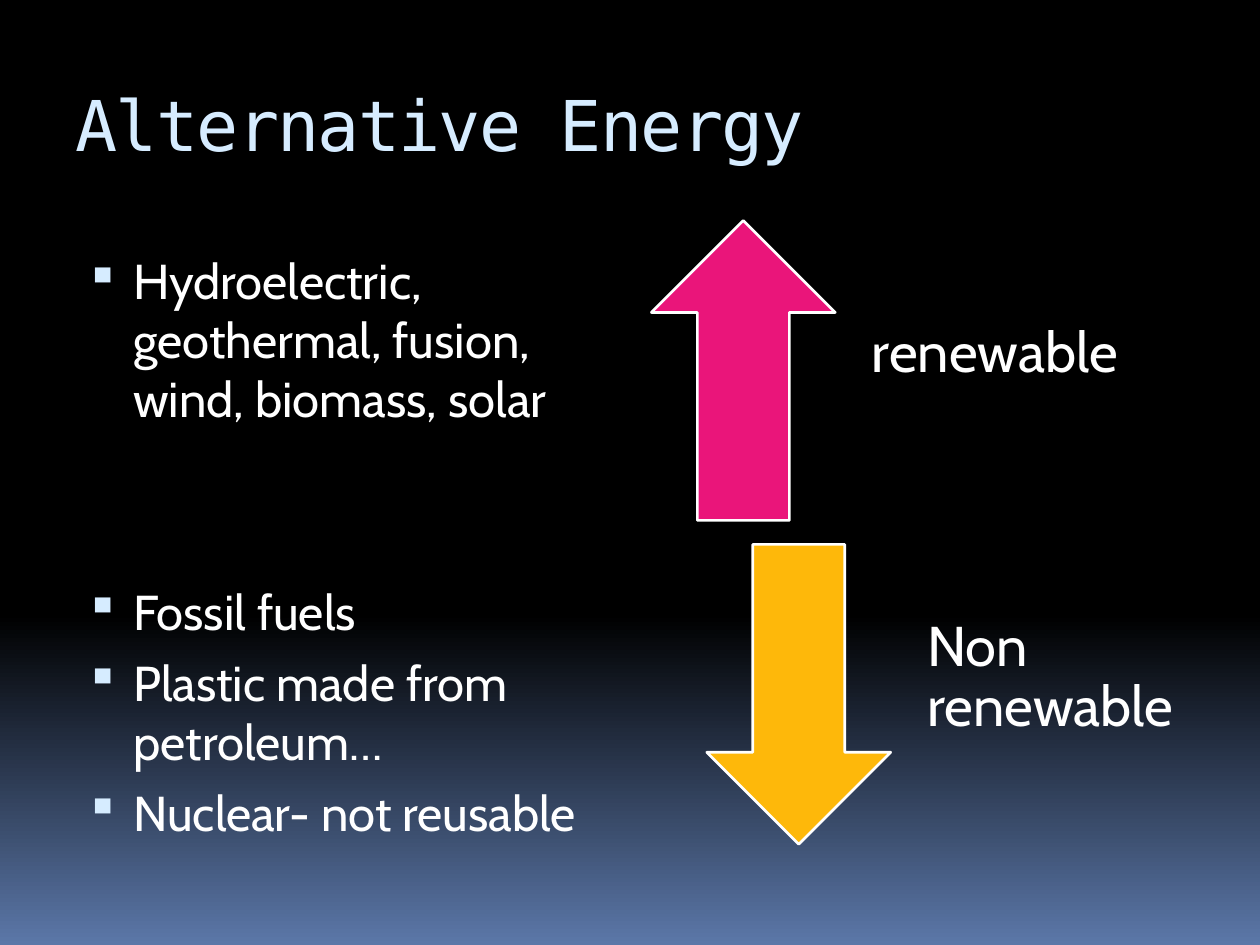
from dataclasses import dataclass
from lxml import etree
from pptx import Presentation
from pptx.dml.color import RGBColor
from pptx.enum.shapes import MSO_SHAPE
from pptx.enum.text import MSO_ANCHOR, PP_ALIGN
from pptx.oxml.ns import qn
from pptx.util import Inches, Pt

UP, DOWN = MSO_SHAPE.UP_ARROW, MSO_SHAPE.DOWN_ARROW
TOP, MIDDLE = MSO_ANCHOR.TOP, MSO_ANCHOR.MIDDLE
LEFT = PP_ALIGN.LEFT


@dataclass(frozen=True)
class Theme:
    """Colours, fonts and type sizes of the slide."""
    black: str = "000000"
    blue: str = "5B77A8"
    pale: str = "D6ECFF"
    white: str = "FFFFFF"
    pink: str = "EA157A"
    gold: str = "FEB80A"
    head: str = "DejaVu Sans Mono"
    body: str = "Cabin"
    title: int = 40
    list: int = 28
    label: int = 32


THEME = Theme()
ITEMS = [
    ("Hydroelectric, geothermal, fusion, wind, biomass, solar", 0),
    ("Fossil fuels", 88),
    ("Plastic made from petroleum…", 7),
    ("Nuclear- not reusable", 7),
]
ARROWS = [
    (UP, THEME.pink, "renewable", (5.17, 1.75, 3.97, 2.38)),
    (DOWN, THEME.gold, "Non renewable", (5.61, 4.32, 3.97, 2.38)),
]


def rgb(code):
    """Turn a hex code into a colour."""
    return RGBColor.from_string(code)


def put(obj, **values):
    """Set each given attribute on an object."""
    for name, value in values.items():
        setattr(obj, name, value)


def place(shape, box):
    """Move and size a shape to a box in inches."""
    names = ("left", "top", "width", "height")
    put(shape, **dict(zip(names, map(Inches, box))))


def write(para, text, face, size, color):
    """Add a styled run to a paragraph."""
    run = para.add_run()
    put(run, text=text)
    put(run.font, name=face, size=Pt(size))
    run.font.color.rgb = rgb(color)
    return run


def add_bullet(para):
    """Give a paragraph a hanging square bullet."""
    props = para._p.get_or_add_pPr()
    props.set("marL", str(Inches(0.45)))
    props.set("indent", str(Inches(-0.38)))
    color = etree.SubElement(props, qn("a:buClr"))
    etree.SubElement(color, qn("a:srgbClr"), val=THEME.pale)
    etree.SubElement(props, qn("a:buSzPct"), val="95000")
    etree.SubElement(props, qn("a:buChar"), char="▪")


def add_back(slide):
    """Fade the background from black to blue at the foot."""
    fill = slide.background.fill
    fill.gradient()
    fill.gradient_angle = 270
    stops = ((0.65, THEME.black), (1, THEME.blue))
    for stop, (spot, color) in zip(fill.gradient_stops, stops):
        stop.position = spot
        stop.color.rgb = rgb(color)


def add_title(slide, text, box):
    """Fill the title placeholder."""
    title = slide.shapes.title
    place(title, box)
    frame = title.text_frame
    put(frame, vertical_anchor=TOP, word_wrap=True, margin_top=Inches(0.09))
    para = frame.paragraphs[0]
    para.alignment = LEFT
    run = write(para, text, THEME.head, THEME.title, THEME.pale)
    run._r.get_or_add_rPr().set("spc", "-100")


def add_list(slide, items, box):
    """Add the bulleted energy sources."""
    frame = slide.shapes.add_textbox(*map(Inches, box)).text_frame
    frame.word_wrap = True
    for rank, (text, gap) in enumerate(items):
        para = frame.add_paragraph() if rank else frame.paragraphs[0]
        para.space_before = Pt(gap)
        add_bullet(para)
        write(para, text, THEME.body, THEME.list, THEME.white)


def add_arrow(slide, kind, color, text, box):
    """Add an arrow with its label on the right."""
    left, top, width, height = box
    wide, gap = 1.46, 0.04
    arrow = slide.shapes.add_shape(
        kind, *map(Inches, (left, top, wide, height)))
    arrow.shadow.inherit = False
    arrow.fill.solid()
    arrow.fill.fore_color.rgb = rgb(color)
    arrow.line.color.rgb = rgb(THEME.white)
    arrow.line.width = Pt(1.5)

    side = wide + gap
    area = (left + side, top, width - side, height)
    frame = slide.shapes.add_textbox(*map(Inches, area)).text_frame
    pad = Inches(0.25)
    put(frame, word_wrap=True, vertical_anchor=MIDDLE, margin_left=pad,
        margin_top=0, margin_right=pad, margin_bottom=pad)
    para = frame.paragraphs[0]
    para.line_spacing = 0.9
    write(para, text, THEME.body, THEME.label, THEME.white)


def main():
    """Build and save the slide."""
    deck = Presentation()
    put(deck, slide_width=Inches(10), slide_height=Inches(7.5))
    slide = deck.slides.add_slide(deck.slide_layouts[5])
    add_back(slide)
    add_title(slide, "Alternative Energy", (0.5, 0.56, 9, 1))
    add_list(slide, ITEMS, (0.51, 1.94, 4.42, 4.95))
    for arrow in ARROWS:
        add_arrow(slide, *arrow)
    deck.save("out.pptx")


if __name__ == "__main__":
    main()
